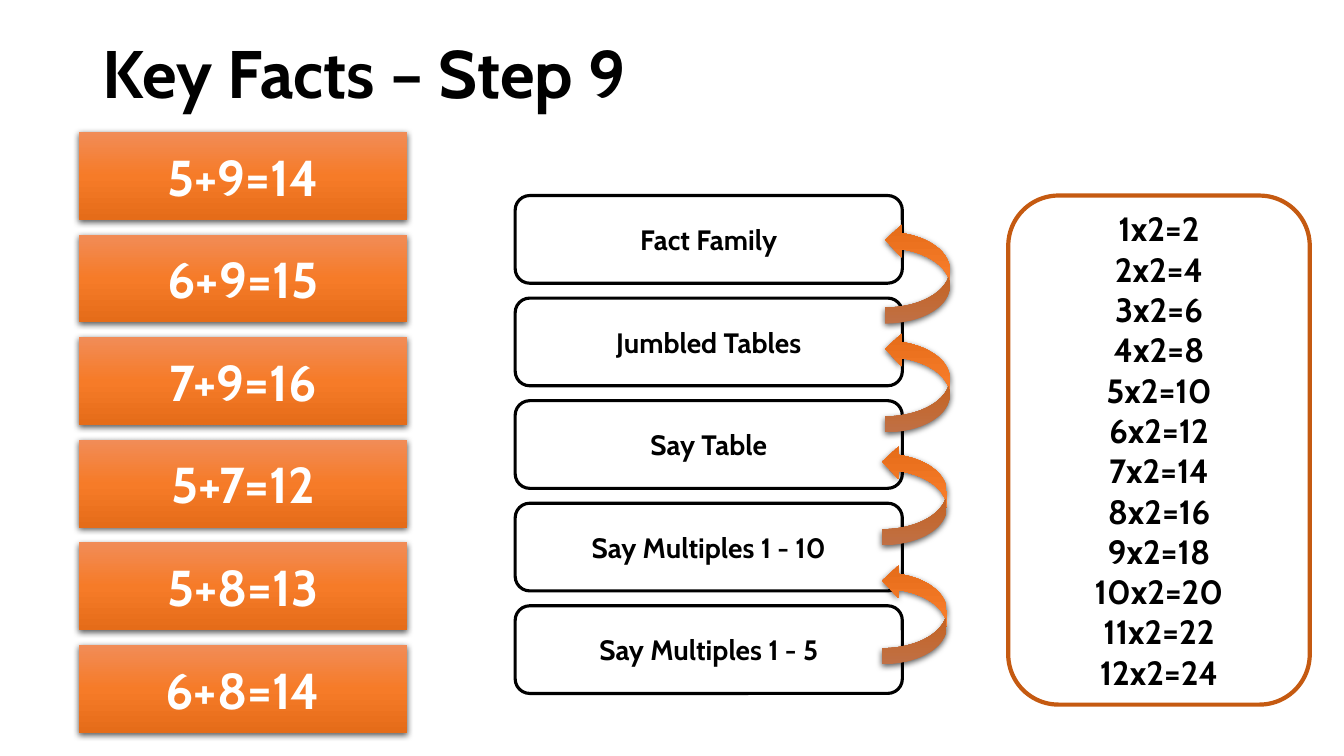
from dataclasses import dataclass

from lxml.etree import SubElement
from pptx import Presentation
from pptx.dml.color import RGBColor as RGB
from pptx.enum.shapes import MSO_SHAPE as Shape
from pptx.enum.text import MSO_ANCHOR as Anchor, PP_ALIGN as Align
from pptx.oxml.ns import qn
from pptx.util import Inches, Pt


@dataclass(frozen=True)
class Theme:
    font: str = "Cabin"
    black: str = "000000"
    white: str = "FFFFFF"
    rust: str = "C55A11"
    glow: tuple = ((0, "F18C57"), (50, "F67B28"), (100, "E56C19"))
    title: int = 48
    sum: int = 36
    table: int = 24
    step: int = 20


THEME = Theme()
SUMS = ["5+9=14", "6+9=15", "7+9=16", "5+7=12", "5+8=13", "6+8=14"]
STEPS = ["Fact Family", "Jumbled Tables", "Say Table",
         "Say Multiples 1 - 10", "Say Multiples 1 - 5"]
ARROWS = [(3.67, 0.28), (3.67, 1.36), (3.64, 2.48), (3.64, 3.66)]


def write(shape, text, size, color=THEME.black, align=Align.CENTER, space=None):
    frame = shape.text_frame
    frame.word_wrap = True
    frame.vertical_anchor = Anchor.MIDDLE
    frame.text = text
    for para in frame.paragraphs:
        para.alignment = align
        para.line_spacing = space
        for run in para.runs:
            font = run.font
            font.name = THEME.font
            font.size = Pt(size)
            font.bold = True
            font.color.rgb = RGB.from_string(color)


def draw(shapes, kind, left, top, width, height):
    shape = shapes.add_shape(kind, *map(Inches, (left, top, width, height)))
    shape.shadow.inherit = False
    return shape


def outline(shape, color, width):
    shape.fill.solid()
    shape.fill.fore_color.rgb = RGB.from_string(THEME.white)
    shape.line.color.rgb = RGB.from_string(color)
    shape.line.width = Pt(width)


def shine(shape):
    shape.line.fill.background()
    shape.fill.gradient()
    shape.fill.gradient_angle = 270
    props = shape.element.spPr
    stops = props.find(".//" + qn("a:gsLst"))
    for stop in list(stops):
        stops.remove(stop)
    for place, color in THEME.glow:
        stop = SubElement(stops, qn("a:gs"), pos=str(place * 1000))
        SubElement(stop, qn("a:srgbClr"), val=color)
    shade = SubElement(props.find(qn("a:effectLst")), qn("a:outerShdw"),
                       blurRad=str(Pt(4.5)), dist=str(Pt(1.5)),
                       dir="5400000", algn="ctr", rotWithShape="0")
    tint = SubElement(shade, qn("a:srgbClr"), val=THEME.black)
    SubElement(tint, qn("a:alpha"), val="63000")


def add_title(slide, left, top, width, height):
    title = slide.shapes.title
    title.left, title.top = Inches(left), Inches(top)
    title.width, title.height = Inches(width), Inches(height)
    write(title, "Key Facts – Step 9", THEME.title, align=Align.LEFT, space=0.9)


def add_steps(slide, left, top, width, height):
    group = slide.shapes.add_group_shape().shapes
    tall = 0.87
    pitch = (height - tall) / (len(STEPS) - 1)
    for i, text in enumerate(STEPS):
        box = draw(group, Shape.ROUNDED_RECTANGLE, left, top + i * pitch, width, tall)
        outline(box, THEME.black, 2.25)
        write(box, text, THEME.step)
    for x, y in ARROWS:
        arrow = draw(group, Shape.CURVED_RIGHT_ARROW, left + x, top + y, 0.64, 0.99)
        arrow.rotation = 180
        shine(arrow)


def add_table(slide, left, top, width, height):
    panel = draw(slide.shapes, Shape.ROUNDED_RECTANGLE, left, top, width, height)
    outline(panel, THEME.rust, 3)
    write(panel, "\n".join(f"{n}x2={n * 2}" for n in range(1, 13)), THEME.table)


def add_sums(slide, left, top, width, height):
    group = slide.shapes.add_group_shape().shapes
    tall = 0.87
    pitch = (height - tall) / (len(SUMS) - 1)
    for i, text in enumerate(SUMS):
        bar = draw(group, Shape.RECTANGLE, left, top + i * pitch, width, tall)
        shine(bar)
        write(bar, text, THEME.sum, color=THEME.white)


def main():
    deck = Presentation()
    deck.slide_width, deck.slide_height = Inches(13.33), Inches(7.5)
    slide = deck.slides.add_slide(deck.slide_layouts[5])
    add_title(slide, 0.92, 0.04, 11.5, 1.45)
    add_steps(slide, 5.11, 1.94, 3.84, 4.94)
    add_table(slide, 10, 1.94, 2.99, 5.05)
    add_sums(slide, 0.78, 1.31, 3.26, 5.96)
    deck.save("out.pptx")


if __name__ == "__main__":
    main()
